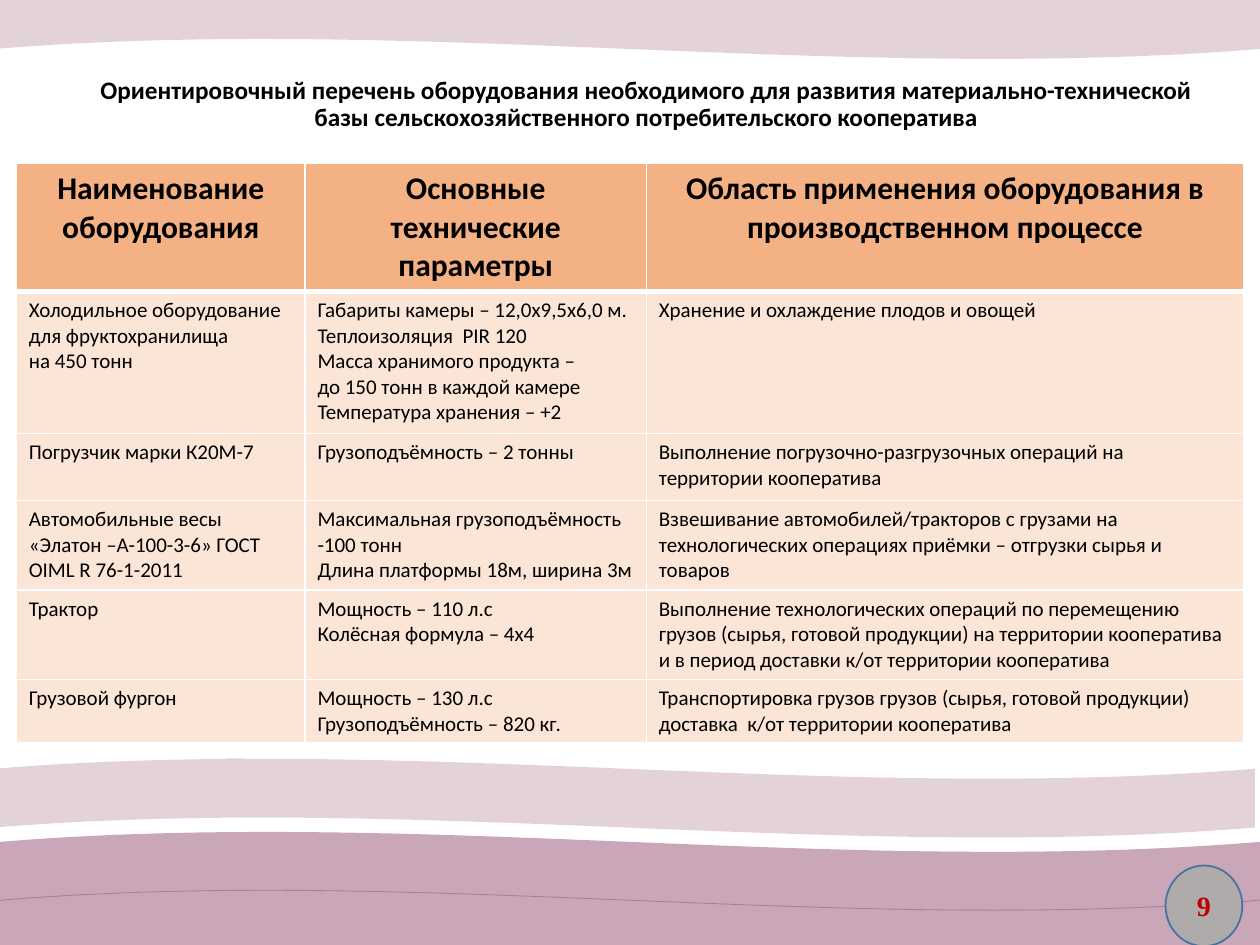
from dataclasses import dataclass

from pptx import Presentation
from pptx.dml.color import RGBColor
from pptx.enum.shapes import MSO_CONNECTOR, MSO_SHAPE
from pptx.enum.text import MSO_ANCHOR, MSO_AUTO_SIZE, PP_ALIGN
from pptx.oxml.ns import qn
from pptx.util import Pt
from lxml import etree

WAVE = MSO_SHAPE.WAVE
OVAL = MSO_SHAPE.OVAL
STRAIGHT = MSO_CONNECTOR.STRAIGHT
MIDDLE = MSO_ANCHOR.MIDDLE
LEFT = PP_ALIGN.LEFT
CENTER = PP_ALIGN.CENTER
NO_AUTOFIT = MSO_AUTO_SIZE.NONE


@dataclass(frozen=True)
class Theme:
    font: str = "Calibri"
    number_font: str = "Times New Roman"
    text: str = "000000"
    wave: str = "954F72"
    hairline: str = "E7E6E6"
    header_fill: str = "F4B183"
    body_fill: str = "FBE5D6"
    border: str = "FFFFFF"
    badge_fill: str = "AFABAB"
    badge_line: str = "43739E"
    badge_text: str = "C00000"
    title_size: float = 14.4
    header_size: float = 18
    body_size: float = 12
    number_size: float = 16


@dataclass(frozen=True)
class Wave:
    left: float
    top: float
    width: float
    opacity: int


@dataclass(frozen=True)
class TextStyle:
    font: str
    size: float
    color: str
    bold: bool = False
    align: PP_ALIGN = LEFT


THEME = Theme()
TITLE_STYLE = TextStyle(THEME.font, THEME.title_size, THEME.text, True, CENTER)
HEADER_STYLE = TextStyle(THEME.font, THEME.header_size, THEME.text, True, CENTER)
BODY_STYLE = TextStyle(THEME.font, THEME.body_size, THEME.text)
NUMBER_STYLE = TextStyle(THEME.number_font, THEME.number_size, THEME.badge_text, True, CENTER)

WAVE_HEIGHT = 45.4
WAVES = [
    Wave(-2.9, -11.5, 722.9, 25),
    Wave(-2.9, 433.4, 720, 25),
    Wave(0, 475.2, 720, 50),
    Wave(0, 508.3, 720, 50),
]

TITLE = (
    "Ориентировочный перечень оборудования необходимого для развития "
    "материально-технической базы сельскохозяйственного потребительского кооператива"
)
COLUMN_WIDTHS = [165, 195, 341.3]
ROW_HEIGHTS = [39.6, 81.4, 38.2, 50.4, 50.4, 36]
EQUIPMENT = [
    (
        ["Наименование оборудования"],
        ["Основные технические параметры"],
        ["Область применения оборудования в производственном процессе"],
    ),
    (
        ["Холодильное оборудование для фруктохранилища", "на 450 тонн"],
        [
            "Габариты камеры – 12,0х9,5х6,0 м.",
            "Теплоизоляция  PIR 120",
            "Масса хранимого продукта –",
            "до 150 тонн в каждой камере",
            "Температура хранения – +2",
        ],
        ["Хранение и охлаждение плодов и овощей"],
    ),
    (
        ["Погрузчик марки К20М-7"],
        ["Грузоподъёмность – 2 тонны"],
        ["Выполнение погрузочно-разгрузочных операций на территории кооператива"],
    ),
    (
        ["Автомобильные весы «Элатон –А-100-3-6» ГОСТ OIML R 76-1-2011"],
        ["Максимальная грузоподъёмность -100 тонн", "Длина платформы 18м, ширина 3м"],
        [
            "Взвешивание автомобилей/тракторов с грузами на технологических "
            "операциях приёмки – отгрузки сырья и товаров"
        ],
    ),
    (
        ["Трактор"],
        ["Мощность – 110 л.с", "Колёсная формула – 4х4"],
        [
            "Выполнение технологических операций по перемещению грузов (сырья, "
            "готовой продукции) на территории кооператива и в период доставки "
            "к/от территории кооператива"
        ],
    ),
    (
        ["Грузовой фургон"],
        ["Мощность – 130 л.с", "Грузоподъёмность – 820 кг."],
        [
            "Транспортировка грузов грузов (сырья, готовой продукции) "
            "доставка  к/от территории кооператива"
        ],
    ),
]


def color(value: str) -> RGBColor:
    return RGBColor.from_string(value)


def write_text(text_frame, lines: list[str], style: TextStyle) -> None:
    text_frame.word_wrap = True
    for index, line in enumerate(lines):
        paragraph = text_frame.add_paragraph() if index else text_frame.paragraphs[0]
        paragraph.alignment = style.align
        run = paragraph.add_run()
        run.text = line
        run.font.name = style.font
        run.font.size = Pt(style.size)
        run.font.bold = style.bold
        run.font.color.rgb = color(style.color)


def draw_wave(slide, wave: Wave) -> None:
    shape = slide.shapes.add_shape(
        WAVE, Pt(wave.left), Pt(wave.top), Pt(wave.width), Pt(WAVE_HEIGHT)
    )
    shape.shadow.inherit = False
    shape.adjustments[0] = 0.13
    shape.adjustments[1] = 0
    shape.fill.solid()
    shape.fill.fore_color.rgb = color(THEME.wave)
    shape.line.fill.background()
    fill_color = shape.fill._xPr.find(qn("a:solidFill"))[0]
    etree.SubElement(fill_color, qn("a:alpha"), val=str(wave.opacity * 1000))


def draw_hairline(slide) -> None:
    line = slide.shapes.add_connector(STRAIGHT, Pt(128.9), Pt(433.4), Pt(139.7), Pt(433.4))
    line.line.color.rgb = color(THEME.hairline)
    line.line.width = Pt(0.75)
    etree.SubElement(line._element.spPr, qn("a:effectLst"))


def draw_title(slide) -> None:
    title = slide.shapes.title
    title.left, title.top, title.width, title.height = Pt(44.6), Pt(43.2), Pt(649.4), Pt(33.1)
    title.text_frame.auto_size = NO_AUTOFIT
    title.text_frame.vertical_anchor = MIDDLE
    write_text(title.text_frame, [TITLE], TITLE_STYLE)
    title.text_frame.paragraphs[0].line_spacing = 0.9


def draw_number(slide, number: str) -> None:
    badge = slide.shapes.add_shape(OVAL, Pt(666), Pt(494.6), Pt(43.9), Pt(46.1))
    badge.shadow.inherit = False
    badge.fill.solid()
    badge.fill.fore_color.rgb = color(THEME.badge_fill)
    badge.line.color.rgb = color(THEME.badge_line)
    badge.line.width = Pt(1)
    badge.text_frame.vertical_anchor = MIDDLE
    write_text(badge.text_frame, [number], NUMBER_STYLE)


def add_borders(cell, top: float, bottom: float) -> None:
    properties = cell._tc.get_or_add_tcPr()
    widths = {"a:lnL": 1, "a:lnR": 1, "a:lnT": top, "a:lnB": bottom}
    for position, (tag, width) in enumerate(widths.items()):
        border = etree.Element(qn(tag), w=str(Pt(width)))
        fill = etree.SubElement(border, qn("a:solidFill"))
        etree.SubElement(fill, qn("a:srgbClr"), val=THEME.border)
        properties.insert(position, border)


def draw_table(slide) -> None:
    table = slide.shapes.add_table(
        len(ROW_HEIGHTS), len(COLUMN_WIDTHS),
        Pt(9.4), Pt(93.3), Pt(sum(COLUMN_WIDTHS)), Pt(sum(ROW_HEIGHTS)),
    ).table
    for column, width in zip(table.columns, COLUMN_WIDTHS):
        column.width = Pt(width)
    for index, (row, height, contents) in enumerate(zip(table.rows, ROW_HEIGHTS, EQUIPMENT)):
        row.height = Pt(height)
        is_header = index == 0
        for cell, lines in zip(row.cells, contents):
            cell.margin_left = cell.margin_right = Pt(7.1)
            cell.margin_top = cell.margin_bottom = Pt(3.6)
            cell.fill.solid()
            cell.fill.fore_color.rgb = color(THEME.header_fill if is_header else THEME.body_fill)
            write_text(cell.text_frame, lines, HEADER_STYLE if is_header else BODY_STYLE)
            add_borders(cell, 3 if index == 1 else 1, 3 if is_header else 1)


def main() -> None:
    presentation = Presentation()
    presentation.slide_width, presentation.slide_height = Pt(720), Pt(540)
    slide = presentation.slides.add_slide(presentation.slide_layouts[5])
    draw_title(slide)
    draw_hairline(slide)
    for wave in WAVES:
        draw_wave(slide, wave)
    draw_number(slide, "9")
    draw_table(slide)
    presentation.save("out.pptx")


if __name__ == "__main__":
    main()
